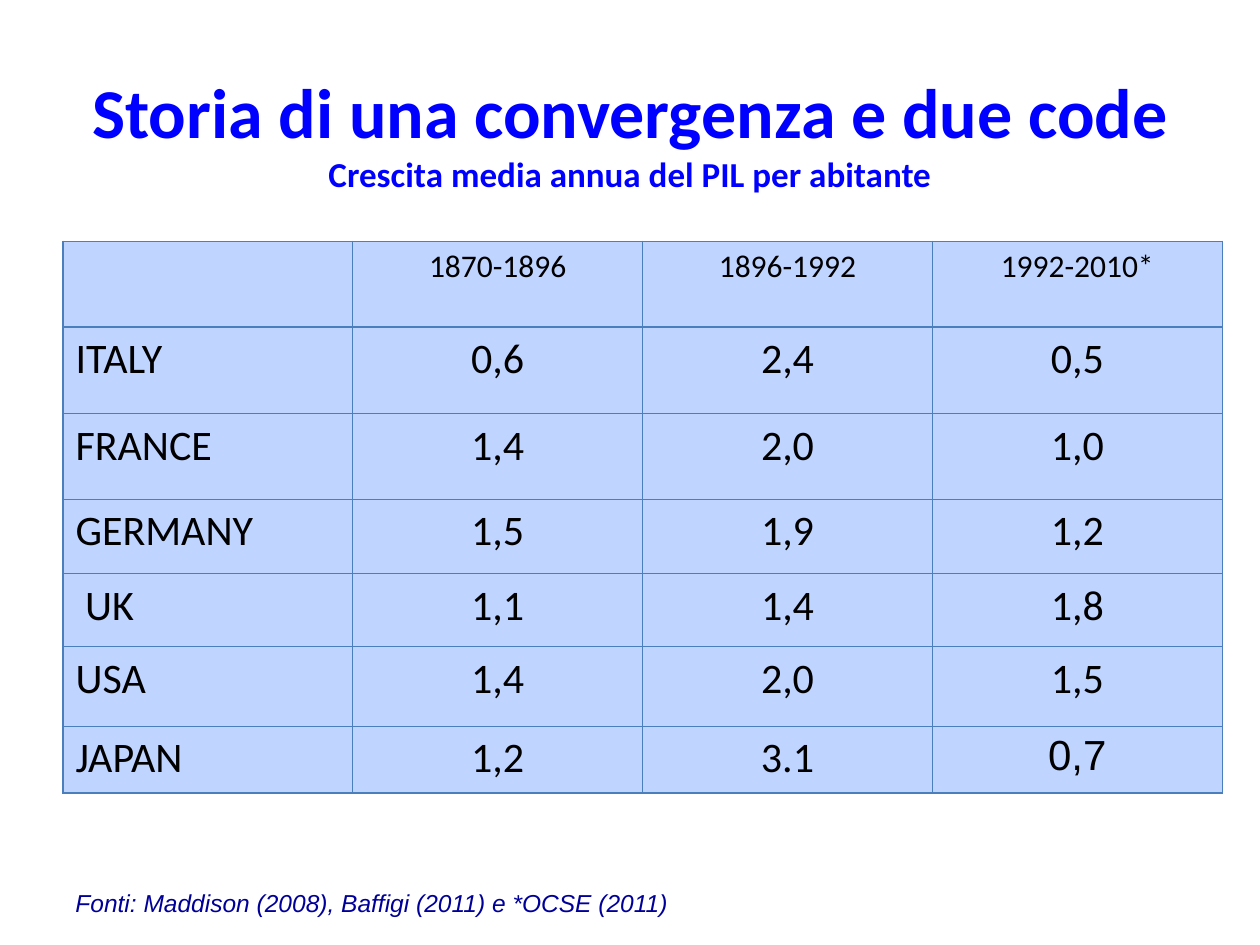
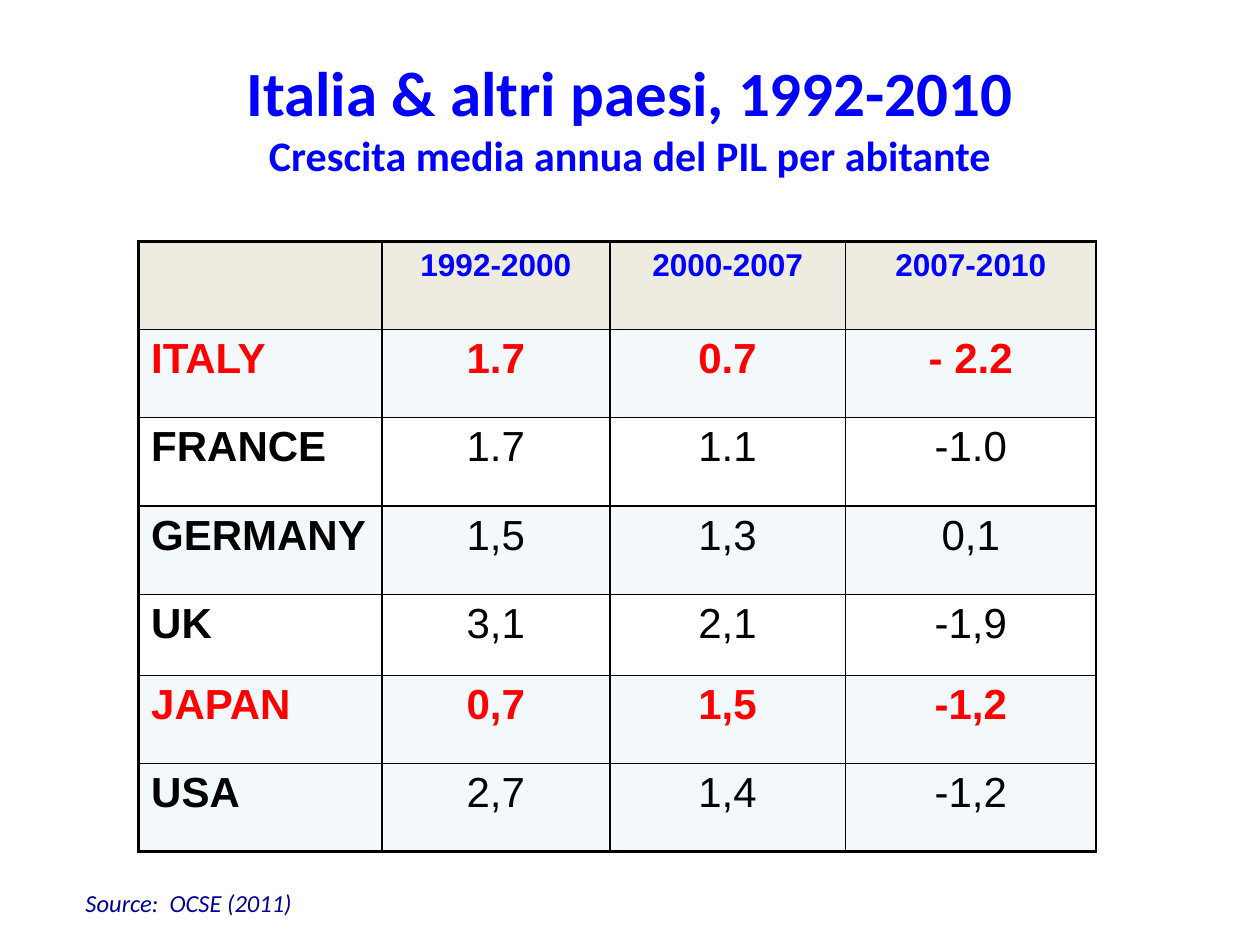
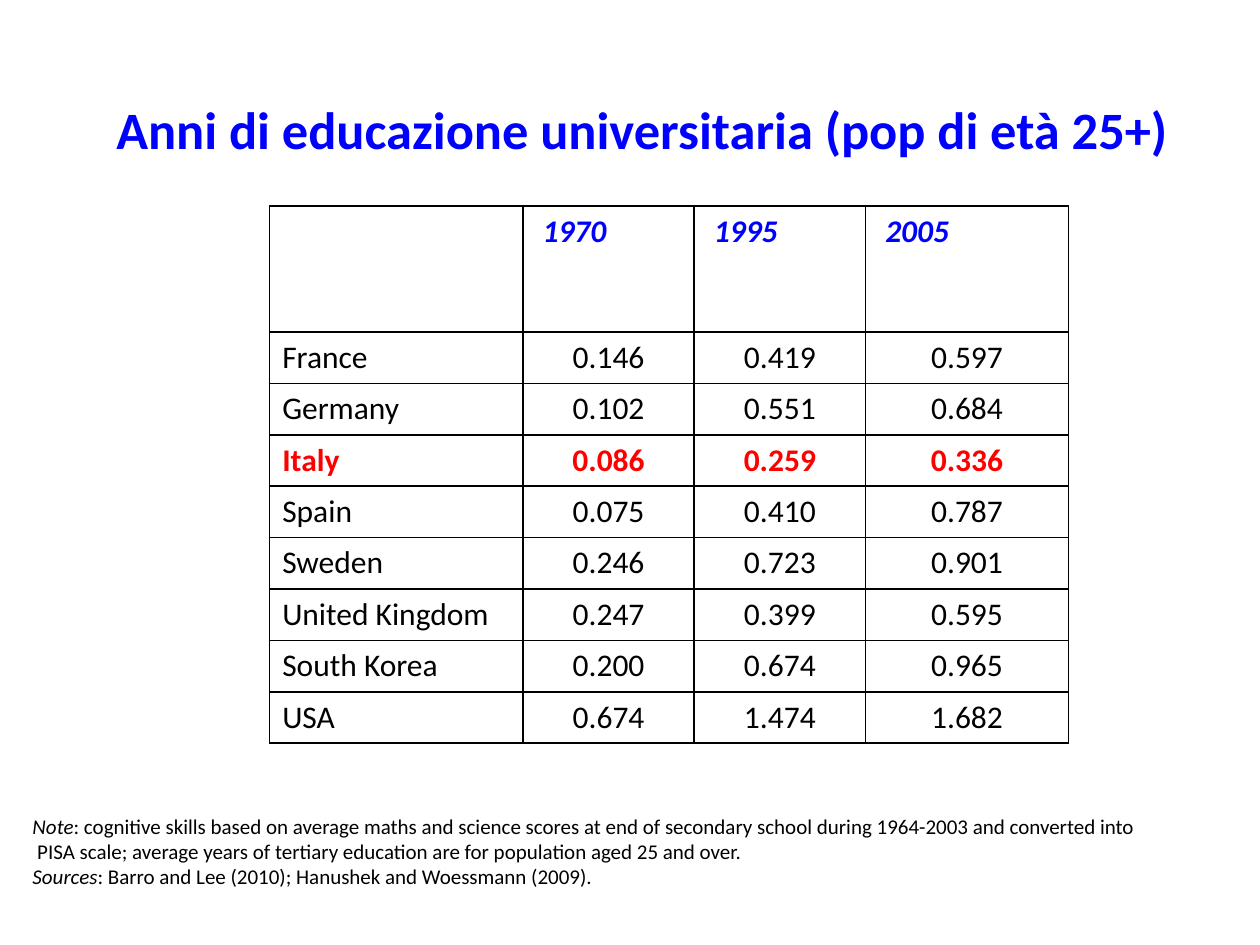
import dataclasses
import typing

import lxml.etree
import pptx
import pptx.dml.color
import pptx.enum.text
import pptx.oxml.ns
import pptx.util

ALIGN = pptx.enum.text.PP_ALIGN
ANCHOR = pptx.enum.text.MSO_ANCHOR


@dataclasses.dataclass(frozen=True)
class Theme:
    """Colours, fonts and type sizes shared by the slides."""
    heading: str = "0000FF"
    ink: str = "000000"
    accent: str = "FF0000"
    source: str = "000099"
    rule: str = "4B7EBC"
    sky: str = "BFD4FF"
    sand: str = "EEECE1"
    mist: str = "F3F9FA"
    white: str = "FFFFFF"
    sans: str = "Calibri"
    plain: str = "Arial"
    body: float = 24
    label: float = 18
    credit: float = 14
    note: float = 12
    thin: float = 1
    thick: float = 2.25


THEME = Theme()


@dataclasses.dataclass(frozen=True)
class Grid:
    """A slide of 10 by 7.5 inches cut into 100 columns and 75 rows."""
    columns: int = 100
    rows: int = 75
    unit: int = pptx.util.Inches(0.1)

    def span(self, count: float) -> int:
        """Return the length of a number of grid units."""
        return round(count * self.unit)


GRID = Grid()


class Area(typing.NamedTuple):
    """A rectangle in grid units."""
    left: float
    top: float
    width: float
    height: float


class Style(typing.NamedTuple):
    """The look of a run."""
    size: float
    color: str = THEME.ink
    bold: bool = False
    italic: bool = False
    font: str = THEME.sans


class Span(typing.NamedTuple):
    """A piece of text in one style."""
    text: str
    style: Style


Line = tuple[Span, ...]


@dataclasses.dataclass(frozen=True)
class TextBlock:
    """A text box whose paragraphs hold spans."""
    area: Area
    lines: tuple[Line, ...]
    align: ALIGN = ALIGN.LEFT
    anchor: ANCHOR = ANCHOR.TOP
    wrap: bool = True


@dataclasses.dataclass(frozen=True)
class DataTable:
    """A table of countries by period, with sizes in grid units."""
    left: float
    top: float
    widths: tuple[float, ...]
    heights: tuple[float, ...]
    rows: tuple[tuple[str, ...], ...]
    header: Style
    body: Style
    fills: tuple[str | None, ...]
    border: str = THEME.ink
    thin: float = THEME.thin
    frame: float = THEME.thin
    header_align: ALIGN = ALIGN.CENTER
    bold_labels: bool = False
    highlights: tuple[str, ...] = ()
    fonts: dict[tuple[int, int], str] = dataclasses.field(default_factory=dict)

    def style_at(self, row: int, column: int) -> Style:
        """Return the text style of a cell."""
        if row == 0:
            return self.header
        style = self.body
        if self.rows[row][0] in self.highlights:
            style = style._replace(color=THEME.accent, bold=True)
        elif column == 0:
            style = style._replace(bold=self.bold_labels)
        return style._replace(font=self.fonts.get((row, column), style.font))

    def align_at(self, row: int, column: int) -> ALIGN:
        """Return the alignment of a cell."""
        if row == 0:
            return self.header_align
        return ALIGN.CENTER if column else ALIGN.LEFT

    def borders_at(self, row: int, column: int) -> dict[str, float]:
        """Return the border widths of a cell."""
        return {
            "L": self.thin if column else self.frame,
            "R": self.thin,
            "T": self.thin if row else self.frame,
            "B": self.frame if row == len(self.rows) - 1 else self.thin,
        }


def add_span(para, span: Span) -> None:
    """Add a span, turning each newline into a line break."""
    for index, piece in enumerate(span.text.split("\n")):
        if index:
            para.add_line_break()
        if piece:
            run = para.add_run()
            run.text = piece
            run.font.name = span.style.font
            run.font.size = pptx.util.Pt(span.style.size)
            run.font.bold = span.style.bold
            run.font.italic = span.style.italic
            run.font.color.rgb = pptx.dml.color.RGBColor.from_string(span.style.color)


def draw_text(page, block: TextBlock) -> None:
    """Draw a text block."""
    box = page.shapes.add_textbox(*map(GRID.span, block.area))
    frame = box.text_frame
    frame.word_wrap = block.wrap
    frame.vertical_anchor = block.anchor
    for index, line in enumerate(block.lines):
        para = frame.add_paragraph() if index else frame.paragraphs[0]
        para.alignment = block.align
        for span in line:
            add_span(para, span)


def draw_border(cell, side: str, color: str, width: float) -> None:
    """Draw one border of a cell."""
    qn = pptx.oxml.ns.qn
    properties = cell._tc.get_or_add_tcPr()
    line = lxml.etree.SubElement(properties, qn(f"a:ln{side}"), w=str(pptx.util.Pt(width)))
    fill = lxml.etree.SubElement(line, qn("a:solidFill"))
    lxml.etree.SubElement(fill, qn("a:srgbClr"), val=color)


def draw_cell(cell, data: DataTable, row: int, column: int) -> None:
    """Draw the borders, fill and text of a cell."""
    for side, width in data.borders_at(row, column).items():
        draw_border(cell, side, data.border, width)
    fill = data.fills[row]
    if fill:
        cell.fill.solid()
        cell.fill.fore_color.rgb = pptx.dml.color.RGBColor.from_string(fill)
    else:
        cell.fill.background()
    para = cell.text_frame.paragraphs[0]
    para.alignment = data.align_at(row, column)
    add_span(para, Span(data.rows[row][column], data.style_at(row, column)))


def draw_table(page, data: DataTable) -> None:
    """Draw a data table."""
    area = Area(data.left, data.top, sum(data.widths), sum(data.heights))
    table = page.shapes.add_table(
        len(data.heights), len(data.widths), *map(GRID.span, area)).table
    table.first_row = table.horz_banding = False
    for column, width in zip(table.columns, data.widths):
        column.width = GRID.span(width)
    for row, height in zip(table.rows, data.heights):
        row.height = GRID.span(height)
    for row, values in enumerate(data.rows):
        for column in range(len(values)):
            draw_cell(table.cell(row, column), data, row, column)


def heading(area: Area, title: str, size: float, subtitle: str = "",
            subtitle_size: float = 0, anchor: ANCHOR = ANCHOR.MIDDLE) -> TextBlock:
    """Return a centred blue title with an optional subtitle below."""
    style = Style(size, THEME.heading, bold=True)
    line: Line = (Span(title, style),)
    if subtitle:
        line = (Span(title + "\n", style), Span(subtitle, style._replace(size=subtitle_size)))
    return TextBlock(area, (line,), ALIGN.CENTER, anchor)


def credit(area: Area, text: str, font: str, wrap: bool) -> TextBlock:
    """Return the source line at the foot of a slide."""
    style = Style(THEME.credit, THEME.source, italic=True, font=font)
    return TextBlock(area, ((Span(text, style),),), wrap=wrap)


SUBTITLE = "Crescita media annua del PIL per abitante"
NOTE = Style(THEME.note)
NOTE_LEAD = NOTE._replace(italic=True)

CONVERGENCE = DataTable(
    left=5, top=19.15, widths=(23,) * 4,
    heights=(6.8, 6.9, 6.8, 5.9, 5.8, 6.3, 5.3),
    rows=(
        ("", "1870-1896", "1896-1992", "1992-2010*"),
        ("ITALY", "0,6", "2,4", "0,5"),
        ("FRANCE", "1,4", "2,0", "1,0"),
        ("GERMANY", "1,5", "1,9", "1,2"),
        (" UK", "1,1", "1,4", "1,8"),
        ("USA", "1,4", "2,0", "1,5"),
        ("JAPAN", "1,2", "3.1", "0,7"),
    ),
    header=Style(THEME.label), body=Style(THEME.body),
    fills=(THEME.sky,) * 7, border=THEME.rule, thin=0.75, frame=0.75,
    fonts={(6, 3): THEME.plain},
)

RECENT_GROWTH = DataTable(
    left=11, top=19.15, widths=(19.3, 18.1, 18.7, 19.9),
    heights=(7, 7, 7, 7.05, 6.4, 7, 7),
    rows=(
        ("", "1992-2000", "2000-2007", "2007-2010"),
        ("ITALY", "1.7", "0.7", "- 2.2"),
        ("FRANCE", "1.7", "1.1", "-1.0"),
        ("GERMANY", "1,5", "1,3", "0,1"),
        ("UK", "3,1", "2,1", "-1,9"),
        ("JAPAN", "0,7", "1,5", "-1,2"),
        ("USA", "2,7", "1,4", "-1,2"),
    ),
    header=Style(THEME.label, THEME.heading, bold=True, font=THEME.plain),
    body=Style(THEME.body, font=THEME.plain),
    fills=(THEME.sand, *(THEME.mist, THEME.white) * 2, THEME.mist, THEME.mist),
    frame=THEME.thick, bold_labels=True, highlights=("ITALY", "JAPAN"),
)

EDUCATION = DataTable(
    left=21.4, top=16.35, widths=(20.1, 13.6, 13.6, 16.1),
    heights=(10, *(4.08,) * 8),
    rows=(
        ("", " 1970", " 1995", " 2005"),
        ("France", "0.146", "0.419", "0.597"),
        ("Germany", "0.102", "0.551", "0.684"),
        ("Italy", "0.086", "0.259", "0.336"),
        ("Spain", "0.075", "0.410", "0.787"),
        ("Sweden", "0.246", "0.723", "0.901"),
        ("United Kingdom", "0.247", "0.399", "0.595"),
        ("South Korea", "0.200", "0.674", "0.965"),
        ("USA", "0.674", "1.474", "1.682"),
    ),
    header=Style(THEME.label, THEME.heading, bold=True, italic=True),
    body=Style(THEME.label), fills=(None,) * 9,
    header_align=ALIGN.LEFT, highlights=("Italy",),
)

EDUCATION_NOTE = TextBlock(
    Area(1.6, 64, 97, 7.1),
    (
        (Span("Note", NOTE_LEAD),
         Span(": cognitive skills based on average maths and science scores at end of "
              "secondary school during 1964-2003 and converted into\n PISA scale; average "
              "years of tertiary education are for population aged 25 and over.", NOTE)),
        (Span("Sources", NOTE_LEAD),
         Span(": Barro and Lee (2010); Hanushek and Woessmann (2009).", NOTE)),
    ),
    anchor=ANCHOR.MIDDLE,
)

PAGES = (
    (heading(Area(5, 4.2, 90, 12.5), "Storia di una convergenza e due code", 40, SUBTITLE, 20),
     CONVERGENCE,
     credit(Area(5, 70, 49.1, 3.3), "Fonti: Maddison (2008), Baffigi (2011) e *OCSE (2011)",
            THEME.plain, wrap=False)),
    (heading(Area(5, 3, 90, 12.5), "Italia & altri paesi, 1992-2010", 36, SUBTITLE, 24),
     RECENT_GROWTH,
     credit(Area(5.8, 70, 60.8, 3.3), "Source:  OCSE (2011)", THEME.sans, wrap=True)),
    (heading(Area(2, 7.2, 98, 9.1), "Anni di educazione universitaria (pop di età 25+)", 30,
             anchor=ANCHOR.TOP),
     EDUCATION,
     EDUCATION_NOTE),
)


def main() -> None:
    """Build the deck and save it."""
    deck = pptx.Presentation()
    deck.slide_width = GRID.span(GRID.columns)
    deck.slide_height = GRID.span(GRID.rows)
    for title, table, footer in PAGES:
        page = deck.slides.add_slide(deck.slide_layouts[6])
        draw_text(page, title)
        draw_table(page, table)
        draw_text(page, footer)
    deck.save("out.pptx")


if __name__ == "__main__":
    main()
